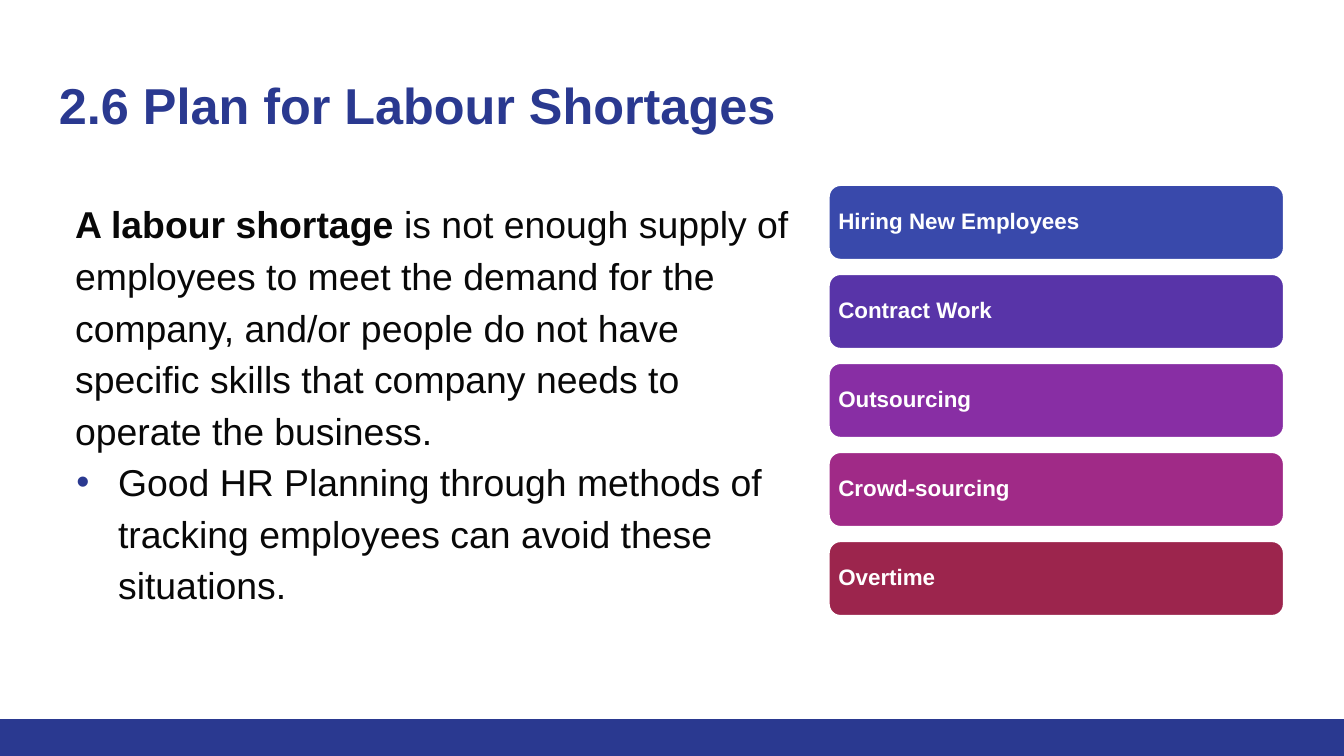
import pptx
import pptx.util
import pptx.dml.color
import pptx.enum.shapes
import pptx.enum.text
import pptx.oxml.ns
from lxml import etree

Inches = pptx.util.Inches
Pt = pptx.util.Pt
ANCHOR = pptx.enum.text.MSO_ANCHOR
SHAPE = pptx.enum.shapes.MSO_SHAPE

COLORS = {"navy": "2A3990", "text": "080808", "white": "FFFFFF"}
METHODS = [
    ("Hiring New Employees", "3949AB"),
    ("Contract Work", "5834A8"),
    ("Outsourcing", "882EA4"),
    ("Crowd-sourcing", "A02A87"),
    ("Overtime", "9C254D"),
]
DEFINITION = (
    "is not enough supply of employees to meet the demand for the company, "
    "and/or people do not have specific skills that company needs to operate "
    "the business."
)
ADVICE = (
    "Good HR Planning through methods of tracking employees can avoid these "
    "situations."
)


def rgb(color):
    return pptx.dml.color.RGBColor.from_string(color)


def format_run(run, size, color, bold=False):
    run.font.name = "Arial"
    run.font.size = Pt(size)
    run.font.bold = bold
    run.font.color.rgb = rgb(color)


def set_frame(text_frame, inset, anchor):
    text_frame.word_wrap = True
    text_frame.vertical_anchor = anchor
    text_frame.margin_left = text_frame.margin_right = Inches(inset)
    text_frame.margin_top = text_frame.margin_bottom = Inches(inset)


def add_text_box(slide, left, top, width, height, anchor):
    box = slide.shapes.add_textbox(
        Inches(left), Inches(top), Inches(width), Inches(height))
    set_frame(box.text_frame, 0.1, anchor)
    return box.text_frame


def add_block(slide, kind, left, top, width, height, color):
    """Add a filled shape without outline or shadow."""
    shape = slide.shapes.add_shape(
        kind, Inches(left), Inches(top), Inches(width), Inches(height))
    shape.shadow.inherit = False
    shape.fill.solid()
    shape.fill.fore_color.rgb = rgb(color)
    shape.line.fill.background()
    return shape


def set_indent(paragraph, left, first_line=0):
    properties = paragraph._p.get_or_add_pPr()
    properties.set("marL", str(Inches(left)))
    properties.set("indent", str(Inches(first_line)))
    return properties


def add_bullet(paragraph, color):
    """Give the paragraph a coloured round bullet with a hanging indent."""
    properties = set_indent(paragraph, 0.44, -0.31)
    qn = pptx.oxml.ns.qn
    bullet_color = etree.SubElement(properties, qn("a:buClr"))
    etree.SubElement(bullet_color, qn("a:srgbClr"), val=color)
    etree.SubElement(properties, qn("a:buFont"), typeface="Arial")
    etree.SubElement(properties, qn("a:buChar"), char="•")


def add_title(slide):
    text_frame = add_text_box(slide, 0.34, 0.45, 9.32, 0.65, ANCHOR.BOTTOM)
    text_frame.text = "2.6 Plan for Labour Shortages"
    format_run(text_frame.paragraphs[0].runs[0], 27, COLORS["navy"], True)


def add_body(slide):
    text_frame = add_text_box(slide, 0.34, 1.35, 5.81, 3.65, ANCHOR.TOP)
    definition = text_frame.paragraphs[0]
    definition.text = "A labour shortage "
    format_run(definition.runs[0], 20, COLORS["text"], True)
    run = definition.add_run()
    run.text = DEFINITION
    format_run(run, 20, COLORS["text"])
    set_indent(definition, 0.12)

    advice = text_frame.add_paragraph()
    advice.text = ADVICE
    format_run(advice.runs[0], 20, COLORS["text"])
    for paragraph in text_frame.paragraphs:
        paragraph.line_spacing = 1.15
    add_bullet(advice, COLORS["navy"])


def add_method_bar(slide, top, label, color):
    bar = add_block(slide, SHAPE.ROUNDED_RECTANGLE, 6.16, top, 3.4, 0.57, color)
    bar.line.color.rgb = rgb(COLORS["white"])
    bar.line.width = Pt(2)
    set_frame(bar.text_frame, 0.05, ANCHOR.MIDDLE)
    bar.text_frame.text = label
    paragraph = bar.text_frame.paragraphs[0]
    paragraph.alignment = pptx.enum.text.PP_ALIGN.LEFT
    paragraph.line_spacing = 0.9
    format_run(paragraph.runs[0], 12, COLORS["white"], True)


def main():
    presentation = pptx.Presentation()
    presentation.slide_width = Inches(10)
    presentation.slide_height = Inches(10 * 9 / 16)
    slide = presentation.slides.add_slide(presentation.slide_layouts[6])

    add_block(slide, SHAPE.RECTANGLE, 0, 5.35, 10, 0.28, COLORS["navy"])
    add_title(slide)
    add_body(slide)
    first_top, last_top = 1.37, 4.02
    step = (last_top - first_top) / (len(METHODS) - 1)
    for index, (label, color) in enumerate(METHODS):
        add_method_bar(slide, first_top + index * step, label, color)

    presentation.save("out.pptx")


if __name__ == "__main__":
    main()
